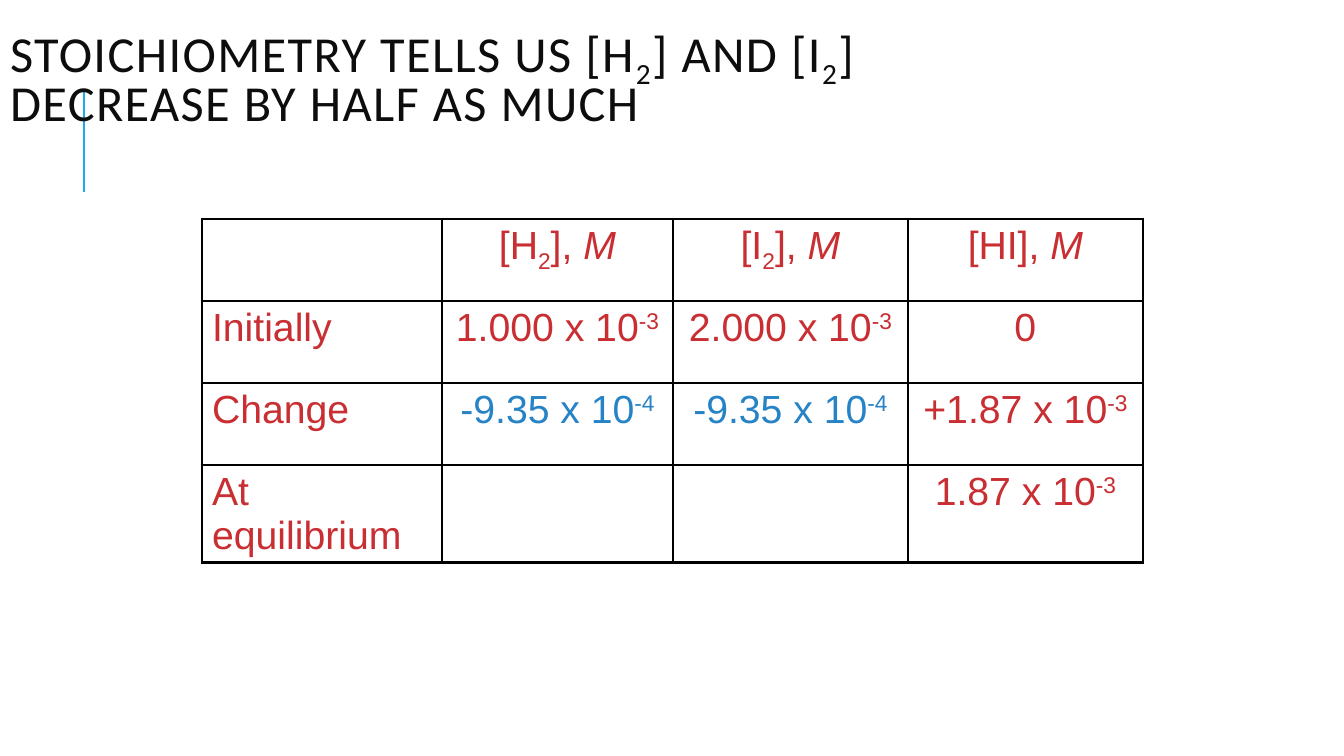
from lxml.etree import SubElement
from pptx import Presentation
from pptx.dml.color import RGBColor as RGB
from pptx.enum.shapes import MSO_CONNECTOR as Link
from pptx.enum.text import MSO_ANCHOR as Anchor, MSO_AUTO_SIZE as Fit, PP_ALIGN as Align
from pptx.oxml import parse_xml
from pptx.oxml.ns import nsdecls, qn
from pptx.util import Pt

THEME = {
    "ink": "0D0D0D", "red": "C82E32", "blue": "2683C6",
    "rule": "1CADE4", "edge": "000000",
    "head": 36, "cell": 28, "thick": 2.25, "thin": 1,
}
SHIFT = {"_": "-25000", "^": "30000"}


def px(n):
    return round(n * 914400 / 100.8)


def write(para, text, font="Arial", size="cell", color="red", align=Align.LEFT, space=0):
    """Parts are split by |; a leading _ lowers, ^ raises, * slants, / breaks the line."""
    para.alignment = align
    for part in text.split("|"):
        mark = part[0] if part[0] in "_^*/" else ""
        if mark == "/":
            para.add_line_break()
        run = para.add_run()
        run.text = part[len(mark):]
        run.font.name = font
        run.font.size = Pt(THEME[size])
        run.font.color.rgb = RGB.from_string(THEME[color])
        run.font.italic = mark == "*"
        props = run.font._element
        if mark in SHIFT:
            props.set("baseline", SHIFT[mark])
        if space:
            props.set("spc", str(space * 100))


deck = Presentation()
deck.slide_width, deck.slide_height = px(1344), px(756)
slide = deck.slides.add_slide(deck.slide_layouts[5])
shapes = slide.shapes

# Title
title = shapes.title
title.left, title.top, title.width, title.height = px(0), px(17), px(1344), px(126)
frame = title.text_frame
frame.word_wrap = True
frame.auto_size = Fit.NONE
frame.vertical_anchor = Anchor.MIDDLE
head = frame.paragraphs[0]
head.line_spacing = 0.8
write(head, "STOICHIOMETRY TELLS US [H|_2|] AND [I|_2|]|/DECREASE BY HALF AS MUCH",
      font="Calibri", size="head", color="ink", space=1)

# Accent rule, behind the title
rule = shapes.add_connector(Link.STRAIGHT, px(84), px(192), px(84), px(91))
rule.line.color.rgb = RGB.from_string(THEME["rule"])
rule.line.width = Pt(1.5)
SubElement(rule._element.spPr, qn("a:effectLst"))
shapes._spTree.insert(2, rule._element)

# Concentration table
ROWS = [
    ["", "[H|_2|], |*M", "[I|_2|], |*M", "[HI], |*M"],
    ["Initially", "1.000 x 10|^-3", "2.000 x 10|^-3", "0"],
    ["Change", "-9.35 x 10|^-4", "-9.35 x 10|^-4", "+1.87 x 10|^-3"],
    ["At equilibrium", "", "", "1.87 x 10|^-3"],
]
WIDE = [240, 231, 235, 235]
TALL = 82
last = len(ROWS) - 1
table = shapes.add_table(len(ROWS), len(WIDE), px(202), px(219),
                         px(sum(WIDE)), px(TALL * len(ROWS))).table
table.first_row = table.horz_banding = False
for col, wide in zip(table.columns, WIDE):
    col.width = px(wide)
for r, row in enumerate(ROWS):
    table.rows[r].height = px(TALL)
    for c, text in enumerate(row):
        cell = table.cell(r, c)
        if text:
            write(cell.text_frame.paragraphs[0], text,
                  color="blue" if text.startswith("-") else "red",
                  align=Align.CENTER if c else Align.LEFT)
        props = cell._tc.get_or_add_tcPr()
        outer = {"L": c == 0, "R": c == len(WIDE) - 1, "T": r == 0, "B": r == last}
        for side, edge in outer.items():
            width = Pt(THEME["thick" if edge else "thin"])
            props.append(parse_xml(
                f'<a:ln{side} {nsdecls("a")} w="{width}"><a:solidFill>'
                f'<a:srgbClr val="{THEME["edge"]}"/></a:solidFill></a:ln{side}>'))
        cell.fill.background()

deck.save("out.pptx")
